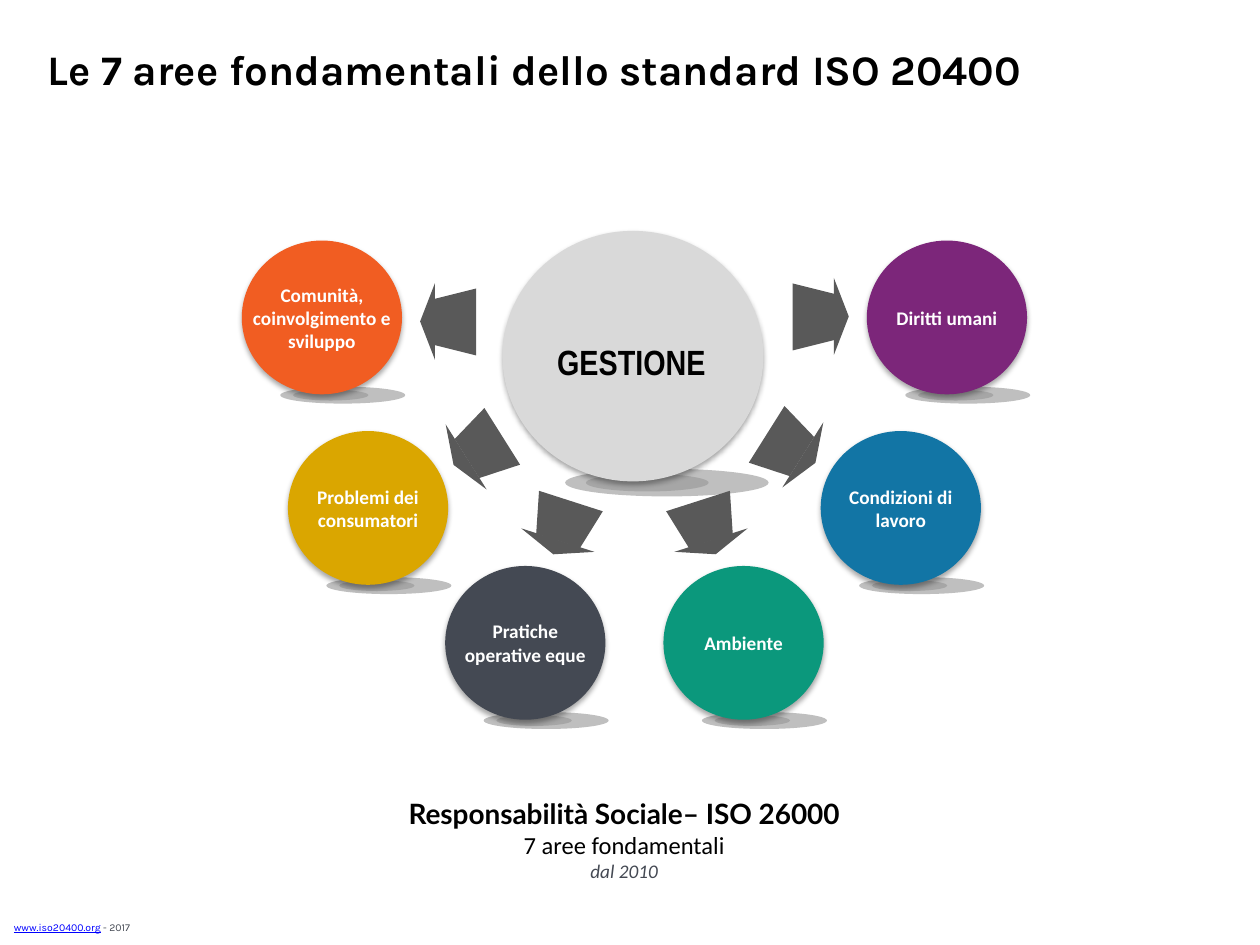
from lxml import etree
from pptx import Presentation
from pptx.dml.color import RGBColor
from pptx.enum import shapes, text
from pptx.oxml import ns
from pptx.util import Cm, Pt

COLORS = {
    "black": "000000", "white": "FFFFFF", "link": "0000FF", "slate": "444953",
    "hub": "D9D9D9", "arrow": "595959", "outer": "BFBFBF", "inner": "A6A6A6",
    "orange": "F15D22", "gold": "DAA600", "green": "0B987C",
    "blue": "1275A5", "purple": "7C267A",
}
HUB_SIZE = (5.26, 5.05)
AREA_SIZE = (3.23, 3.1)
BODY_SIZE = (1.35, 0.84)
HEAD_SIZE = (1.55, 0.3)

# Areas: distance from the wheel axis, height of the centre, colour, label, label size
AREAS = [
    (-2.2, 8.31, "slate", "Pratiche operative eque", (3.28, 1.19)),
    (-5.37, 5.59, "gold", "Problemi dei consumatori", (3.28, 1.19)),
    (-6.3, 1.75, "orange", "Comunità, coinvolgimento e sviluppo", (3.38, 1.68)),
    (2.2, 8.31, "green", "Ambiente", (3.28, 0.74)),
    (5.37, 5.59, "blue", "Condizioni di lavoro", (3.28, 1.19)),
    (6.3, 1.75, "purple", "Diritti umani", (3.05, 0.74)),
]
# Arrows: angle, centre of body, centre of head, drop of the left one
ARROWS = [
    (90, (3.61, 1.74), (4.17, 1.73), 0.1),
    (122.2, (3.02, 4.33), (3.52, 4.6), 0.04),
    (162.2, (1.41, 5.85), (1.59, 6.38), 0),
]


def color(name):
    return RGBColor.from_string(COLORS[name])


def add_run(paragraph, words, size, font, tint, bold=False, italic=False, underline=False):
    run = paragraph.add_run()
    run.text = words
    run.font.size = Pt(size)
    run.font.name = font
    run.font.color.rgb = color(tint)
    run.font.bold, run.font.italic, run.font.underline = bold, italic, underline


def add_text_box(slide, box):
    frame = slide.shapes.add_textbox(*(Cm(length) for length in box)).text_frame
    frame.word_wrap = True
    return frame


def centred_box(x, y, size):
    width, height = size
    return x - width / 2, y - height / 2, width, height


def add_solid(slide, kind, box, tint, rotation=0):
    shape = slide.shapes.add_shape(kind, *(Cm(length) for length in box))
    shape.shadow.inherit = False
    shape.fill.solid()
    shape.fill.fore_color.rgb = color(tint)
    shape.line.fill.background()
    shape.rotation = rotation
    return shape


def add_soft_shadow(shape):
    effects = shape.element.spPr.find(ns.qn("a:effectLst"))
    shadow = etree.SubElement(effects, ns.qn("a:outerShdw"), blurRad=str(Pt(3.1)),
                              dist=str(Pt(1.8)), dir="5400000", rotWithShape="0")
    tint = etree.SubElement(shadow, ns.qn("a:srgbClr"), val=COLORS["black"])
    etree.SubElement(tint, ns.qn("a:alpha"), val="35000")


def add_sphere(slide, box, tint):
    """A disc resting on two flat ellipses, all in proportion to the box."""
    left, top, width, height = box
    ellipse = shapes.MSO_SHAPE.OVAL
    for name, x, y, w, h in (("outer", 0.24, 0.95, 0.78, 0.11),
                             ("inner", 0.32, 0.97, 0.47, 0.07)):
        add_solid(slide, ellipse,
                  (left + x * width, top + y * height, w * width, h * height), name)
    add_soft_shadow(add_solid(slide, ellipse, box, tint))


def add_label(slide, box, words, size, font, tint):
    frame = add_text_box(slide, box)
    frame.vertical_anchor = text.MSO_ANCHOR.MIDDLE
    paragraph = frame.paragraphs[0]
    paragraph.alignment = text.PP_ALIGN.CENTER
    add_run(paragraph, words, size, font, tint, bold=True)


def add_wheel(slide, box):
    left, top, width, _ = box
    axis = left + width / 2

    # Hub and areas
    add_sphere(slide, centred_box(axis - 0.03, top + 2.53, HUB_SIZE), "hub")
    for x, y, tint, _, _ in AREAS:
        add_sphere(slide, centred_box(axis + x, top + y, AREA_SIZE), tint)

    # Arrows, mirrored about the axis
    for angle, body, head, drop in ARROWS:
        for side, fall in ((1, 0), (-1, drop)):
            for kind, (x, y), size in ((shapes.MSO_SHAPE.TRAPEZOID, body, BODY_SIZE),
                                       (shapes.MSO_SHAPE.ISOSCELES_TRIANGLE, head, HEAD_SIZE)):
                add_solid(slide, kind, centred_box(axis + side * x, top + y + fall, size),
                          "arrow", side * angle % 360)

    # Labels
    add_label(slide, centred_box(axis - 0.06, top + 2.64, (5.49, 1.12)),
              "GESTIONE", 20, "Arial Narrow", "black")
    for x, y, _, words, size in AREAS:
        add_label(slide, centred_box(axis + x, top + y, size), words, 11, "Calibri", "white")


def add_title(slide, box):
    title = slide.shapes.title
    title.left, title.top, title.width, title.height = (Cm(length) for length in box)
    frame = title.text_frame
    frame.auto_size = text.MSO_AUTO_SIZE.NONE
    frame.word_wrap = True
    frame.vertical_anchor = text.MSO_ANCHOR.TOP
    paragraph = frame.paragraphs[0]
    paragraph.alignment = text.PP_ALIGN.LEFT
    add_run(paragraph, "Le 7 aree fondamentali dello standard ISO 20400", 24, "Karla",
            "black", bold=True)


def add_caption(slide, box):
    frame = add_text_box(slide, box)
    lines = [
        ("Responsabilità Sociale– ISO 26000", 16, "Lato", "black", True, False),
        ("7 aree fondamentali", 14, "Calibri", "black", False, False),
        ("dal 2010", 11, "Calibri", "slate", False, True),
    ]
    for index, line in enumerate(lines):
        paragraph = frame.add_paragraph() if index else frame.paragraphs[0]
        paragraph.alignment = text.PP_ALIGN.CENTER
        add_run(paragraph, *line)


def add_footer(slide, box):
    paragraph = add_text_box(slide, box).paragraphs[0]
    add_run(paragraph, "www.iso20400.org", 6, "Karla", "link", underline=True)
    add_run(paragraph, " - 2017", 6, "Karla", "slate")


def main():
    presentation = Presentation()
    presentation.slide_width, presentation.slide_height = Cm(25.4), Cm(19.05)
    slide = presentation.slides.add_slide(presentation.slide_layouts[5])
    add_footer(slide, (0.03, 18.44, 16.43, 0.51))
    add_title(slide, (0.71, 0.74, 20.6, 1.27))
    add_caption(slide, (4.09, 15.93, 16.99, 2.01))
    add_wheel(slide, (4.88, 4.65, 15.82, 9.86))
    presentation.save("out.pptx")


if __name__ == "__main__":
    main()
